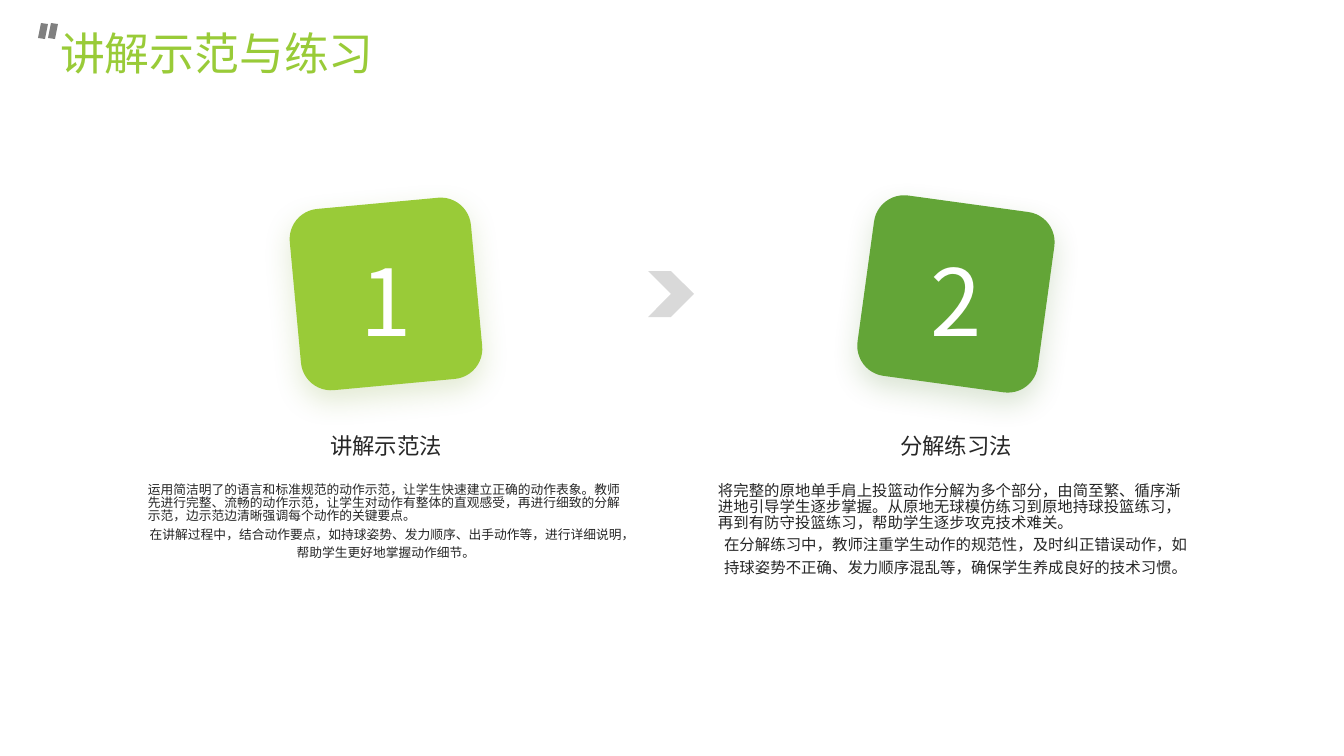
from dataclasses import dataclass

from lxml import etree
from pptx import Presentation
from pptx.dml.color import RGBColor
from pptx.enum.shapes import MSO_SHAPE
from pptx.enum.text import MSO_ANCHOR, MSO_AUTO_SIZE, PP_ALIGN
from pptx.oxml.ns import qn
from pptx.util import Emu, Pt

ROUNDED, CHEVRON = MSO_SHAPE.ROUNDED_RECTANGLE, MSO_SHAPE.CHEVRON
LEFT, CENTER = PP_ALIGN.LEFT, PP_ALIGN.CENTER
TOP, MIDDLE = MSO_ANCHOR.TOP, MSO_ANCHOR.MIDDLE
NO_AUTOFIT = MSO_AUTO_SIZE.NONE
EMU_PER_PX = 914400 / 100.8
FONT = "Noto Sans CJK SC"
LIME, GREEN, INK, WHITE = "99CB38", "63A537", "262626", "FFFFFF"
COLUMN_LEFT, COLUMN_STEP, COLUMN_WIDTH = 148, 570, 476


@dataclass
class Line:
    text: str
    size: float
    color: str
    spacing: float
    align: int = CENTER


@dataclass
class Step:
    heading: str
    intro: str
    detail: str
    body_size: float
    fill: str
    shadow: str
    angle: float


STEPS = [
    Step("讲解示范法",
         "运用简洁明了的语言和标准规范的动作示范，让学生快速建立正确的动作表象。教师先进行完整、流畅的动作示范，"
         "让学生对动作有整体的直观感受，再进行细致的分解示范，边示范边清晰强调每个动作的关键要点。",
         "在讲解过程中，结合动作要点，如持球姿势、发力顺序、出手动作等，进行详细说明，帮助学生更好地掌握动作细节。",
         9.1, LIME, "739A28", -5.3),
    Step("分解练习法",
         "将完整的原地单手肩上投篮动作分解为多个部分，由简至繁、循序渐进地引导学生逐步掌握。"
         "从原地无球模仿练习到原地持球投篮练习，再到有防守投篮练习，帮助学生逐步攻克技术难关。",
         "在分解练习中，教师注重学生动作的规范性，及时纠正错误动作，如持球姿势不正确、发力顺序混乱等，确保学生养成良好的技术习惯。",
         11, GREEN, "4A7C29", 7.8),
]


def px(n: float) -> Emu:
    return Emu(round(n * EMU_PER_PX))


def rgb(color: str) -> RGBColor:
    return RGBColor.from_string(color)


def place(sp, x: int, y: int, w: int, h: int) -> None:
    sp.left, sp.top, sp.width, sp.height = px(x), px(y), px(w), px(h)


def paint(sp, color: str) -> None:
    sp.fill.solid()
    sp.fill.fore_color.rgb = rgb(color)
    sp.line.fill.background()
    sp.shadow.inherit = False


def write(sp, lines: list[Line], anchor: int) -> None:
    tf = sp.text_frame
    tf.word_wrap = True
    tf.auto_size = NO_AUTOFIT
    tf.vertical_anchor = anchor
    tf.margin_left = tf.margin_right = tf.margin_top = tf.margin_bottom = 0
    tf.text = "\n".join(line.text for line in lines)
    for p, line in zip(tf.paragraphs, lines):
        p.alignment, p.line_spacing = line.align, line.spacing
        p.space_before = p.space_after = Pt(0)
        for r in p.runs:
            r.font.size, r.font.name = Pt(line.size), FONT
            r.font.color.rgb = rgb(line.color)
            etree.SubElement(r.font._element, qn("a:ea"), typeface=FONT)
            # Schema order puts the East Asian font right after the Latin one
            r.font._element.find(qn("a:latin")).addnext(r.font._element.find(qn("a:ea")))


def add_text(slide, x: int, y: int, w: int, h: int, lines: list[Line], anchor: int = TOP) -> None:
    write(slide.shapes.add_textbox(px(x), px(y), px(w), px(h)), lines, anchor)


def add_shape(slide, kind: int, x: int, y: int, size: int, color: str):
    sp = slide.shapes.add_shape(kind, px(x), px(y), px(size), px(size))
    paint(sp, color)
    return sp


def add_shadow(sp, color: str) -> None:
    effects = sp._element.spPr.find(qn("a:effectLst"))
    shadow = etree.SubElement(effects, qn("a:outerShdw"), blurRad=str(Pt(20)), dist=str(Pt(8)),
                              dir="5400000", algn="t", rotWithShape="0")
    tint = etree.SubElement(shadow, qn("a:srgbClr"), val=color)
    etree.SubElement(tint, qn("a:alpha"), val="20000")


def add_step(slide, index: int, step: Step) -> None:
    x = COLUMN_LEFT + index * COLUMN_STEP
    tile = add_shape(slide, ROUNDED, x + 147, 203, 182, step.fill)
    tile.rotation = step.angle
    add_shadow(tile, step.shadow)
    add_text(slide, x, 484, COLUMN_WIDTH, 114,
             [Line(step.intro, step.body_size, INK, 0.85, LEFT),
              Line(step.detail, step.body_size, INK, 1.22)])
    add_text(slide, x, 430, COLUMN_WIDTH, 37, [Line(step.heading, 16, INK, 1.1)])
    add_text(slide, x + 175, 228, 127, 132, [Line(str(index + 1), 66, WHITE, 1.1)], MIDDLE)


def add_quote_mark(slide) -> None:
    strokes = [[(x + 3, 23), (x + 10, 24), (x + 7, 39), (x, 38)] for x in (48, 38)]
    builder = slide.shapes.build_freeform(*strokes[0][0], scale=EMU_PER_PX)
    builder.add_line_segments(strokes[0][1:])
    builder.move_to(*strokes[1][0])
    builder.add_line_segments(strokes[1][1:])
    paint(builder.convert_to_shape(), "808080")


def main() -> None:
    prs = Presentation()
    prs.slide_width, prs.slide_height = px(1344), px(756)
    slide = prs.slides.add_slide(prs.slide_layouts[5])

    # Title with its quotation mark
    title = slide.shapes.title
    place(title, 60, 24, 1107, 47)
    write(title, [Line("讲解示范与练习", 32, LIME, 1.2, LEFT)], MIDDLE)
    add_quote_mark(slide)

    # Two steps and the chevron between them
    for index, step in enumerate(STEPS):
        add_step(slide, index, step)
    add_shape(slide, CHEVRON, 648, 271, 46, "D9D9D9")

    prs.save("out.pptx")


if __name__ == "__main__":
    main()
